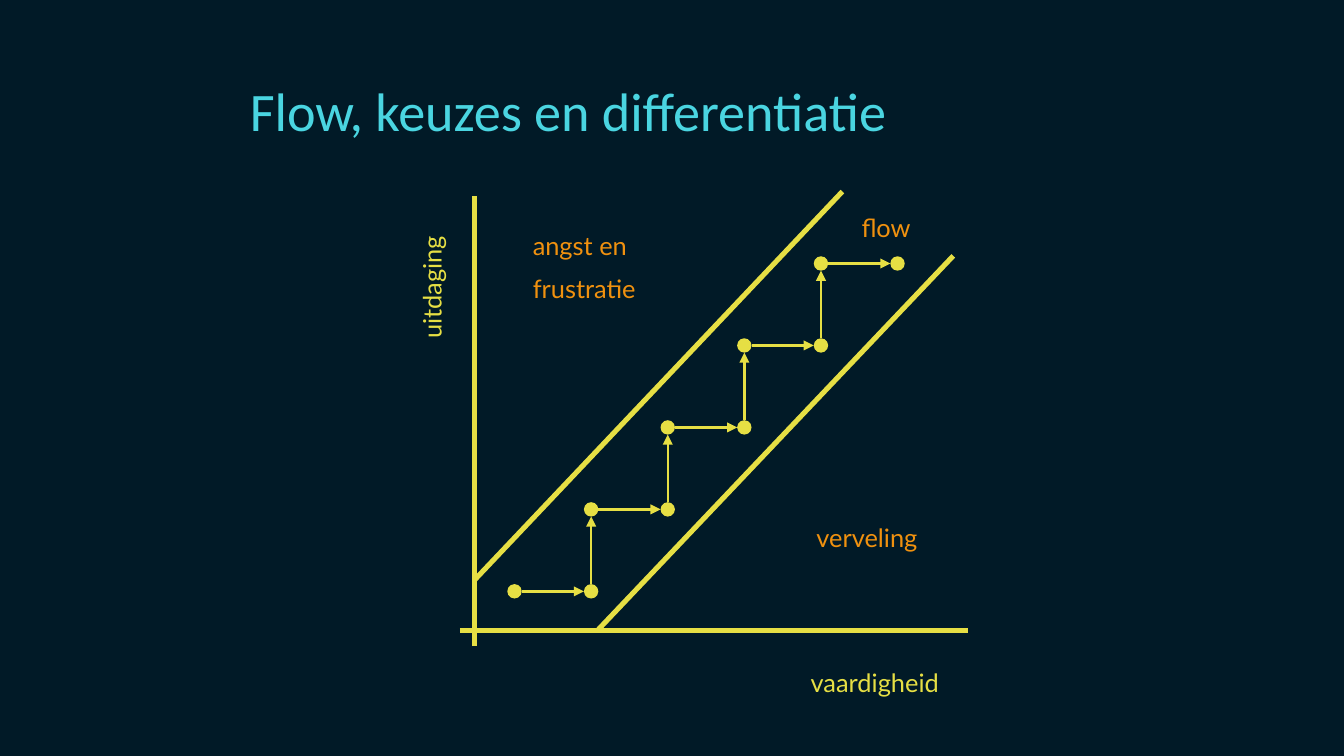
from pptx import Presentation
from pptx.dml.color import RGBColor
from pptx.enum.shapes import MSO_CONNECTOR, MSO_SHAPE
from pptx.enum.text import MSO_ANCHOR, MSO_AUTO_SIZE, PP_ALIGN
from pptx.oxml.ns import qn
from pptx.util import Cm, Pt
from lxml import etree

NAVY = RGBColor(0x01, 0x1A, 0x27)
CYAN = RGBColor(0x4A, 0xD5, 0xE1)
YELLOW = RGBColor(0xE6, 0xDF, 0x44)
ORANGE = RGBColor(0xF0, 0x91, 0x0F)

STRAIGHT = MSO_CONNECTOR.STRAIGHT
OVAL = MSO_SHAPE.OVAL
MIDDLE = MSO_ANCHOR.MIDDLE
LEFT = PP_ALIGN.LEFT
NO_AUTOFIT = MSO_AUTO_SIZE.NONE

# Staircase of dots, in centimetres
DOT_COUNT = 10
DOT_SIZE = 0.3
FIRST_X, FIRST_Y = 10.72, 12.32
STEP_WIDTH = 7.98 / 5
STEP_HEIGHT = 6.83 / 4

# Start x, start y, end x, end y in centimetres
AXES = [(9.88, 13.46, 9.88, 4.09), (9.58, 13.13, 20.17, 13.13)]
FLOW_BORDERS = [(12.47, 13.11, 19.86, 5.33), (9.88, 12.09, 17.55, 3.99)]

# Text, left, top, width, height, colour, rotation
LABELS = [
    ("vaardigheid", 16.64, 13.51, 4.42, 1.09, YELLOW, 0),
    ("uitdaging", 6.63, 4.55, 4.42, 1.09, YELLOW, 270),
    ("verveling", 16.76, 10.49, 2.9, 1.09, ORANGE, 0),
    ("angst en frustratie", 10.85, 4.42, 3.45, 2.41, ORANGE, 0),
    ("flow", 17.7, 4.04, 2.9, 1.09, ORANGE, 0),
]


def format_run(run, font_name, size, colour):
    run.font.name = font_name
    run.font.size = Pt(size)
    run.font.color.rgb = colour


def set_title(slide, text):
    title = slide.shapes.title
    title.left, title.top = Cm(4.95), Cm(0.84)
    title.width, title.height = Cm(18.11), Cm(3.05)
    text_frame = title.text_frame
    text_frame.text = text
    text_frame.auto_size = NO_AUTOFIT
    text_frame.vertical_anchor = MIDDLE
    paragraph = text_frame.paragraphs[0]
    paragraph.alignment = LEFT
    paragraph.line_spacing = 0.9
    format_run(paragraph.runs[0], "Calibri", 32, CYAN)


def add_label(slide, text, left, top, width, height, colour, rotation):
    box = slide.shapes.add_textbox(Cm(left), Cm(top), Cm(width), Cm(height))
    box.rotation = rotation
    text_frame = box.text_frame
    text_frame.word_wrap = True
    text_frame.text = text
    paragraph = text_frame.paragraphs[0]
    paragraph.line_spacing = Pt(25.2)
    paragraph.space_before = Pt(8.3)
    format_run(paragraph.runs[0], "Lato", 15, colour)


def add_line(slide, start_x, start_y, end_x, end_y, weight=3):
    line = slide.shapes.add_connector(
        STRAIGHT, Cm(start_x), Cm(start_y), Cm(end_x), Cm(end_y))
    line.line.color.rgb = YELLOW
    line.line.width = Pt(weight)
    etree.SubElement(line._element.spPr, qn("a:effectLst"))
    return line


def add_arrow(slide, *ends):
    arrow = add_line(slide, *ends, weight=1.5)
    tail = etree.SubElement(arrow.line._get_or_add_ln(), qn("a:tailEnd"))
    tail.set("type", "triangle")


def add_dot(slide, x, y):
    radius = DOT_SIZE / 2
    dot = slide.shapes.add_shape(
        OVAL, Cm(x - radius), Cm(y - radius), Cm(DOT_SIZE), Cm(DOT_SIZE))
    dot.shadow.inherit = False
    dot.fill.solid()
    dot.fill.fore_color.rgb = YELLOW
    dot.line.fill.background()


def add_staircase(slide):
    # Dots alternate between a step right and a step up
    centres = [(FIRST_X + (index + 1) // 2 * STEP_WIDTH,
                FIRST_Y - index // 2 * STEP_HEIGHT)
               for index in range(DOT_COUNT)]
    radius = DOT_SIZE / 2
    for x, y in centres:
        add_dot(slide, x, y)
    for index, (start, end) in enumerate(zip(centres, centres[1:])):
        if index % 2 == 0:
            add_arrow(slide, start[0] + radius, start[1],
                      end[0] - radius, end[1])
        else:
            add_arrow(slide, start[0], start[1] - radius,
                      end[0], end[1] + radius)


def main():
    presentation = Presentation()
    presentation.slide_width = Cm(28)
    presentation.slide_height = Cm(15.75)
    slide = presentation.slides.add_slide(presentation.slide_layouts[5])
    slide.background.fill.solid()
    slide.background.fill.fore_color.rgb = NAVY

    set_title(slide, "Flow, keuzes en differentiatie")

    # Axes and the borders of the flow channel
    for ends in AXES + FLOW_BORDERS:
        add_line(slide, *ends)

    add_staircase(slide)

    # Axis names and zones
    for label in LABELS:
        add_label(slide, *label)

    presentation.save("out.pptx")


if __name__ == "__main__":
    main()
